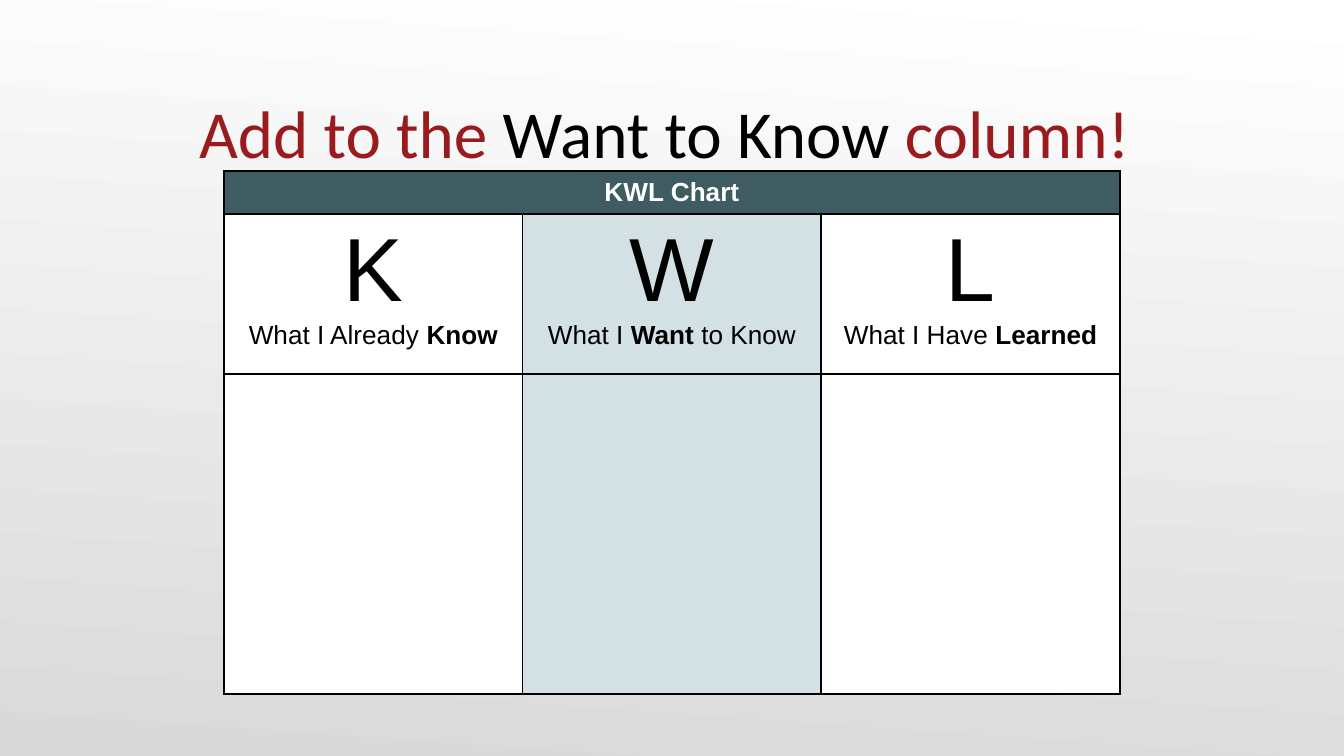
import pptx
import pptx.dml.color
import pptx.enum.text
import pptx.oxml
import pptx.oxml.ns
import pptx.util

EMU_PER_PX = 914400 / 134.4
BLACK = "000000"
WHITE = "FFFFFF"
RED = "991B1E"
TEAL = "3E5C61"
PALE_TEAL = "D4E1E4"


def px(length):
    return pptx.util.Emu(round(length * EMU_PER_PX))


def rgb(value):
    return pptx.dml.color.RGBColor.from_string(value)


def add_text(paragraph, text, font="Arial", size=14, color=BLACK, bold=False):
    paragraph.alignment = pptx.enum.text.PP_ALIGN.CENTER
    run = paragraph.add_run()
    run.text = text
    run.font.name = font
    run.font.size = pptx.util.Pt(size)
    run.font.color.rgb = rgb(color)
    run.font.bold = bold


def paint_background(slide):
    fill = slide.background.fill
    fill.gradient()
    fill.gradient_angle = 266
    for stop, color, position in zip(fill.gradient_stops, (WHITE, "D9D9D9"), (0, 1)):
        stop.color.rgb = rgb(color)
        stop.position = position


def place_heading(slide, left, top, width, height):
    heading = slide.shapes.title
    heading.left, heading.top = px(left), px(top)
    heading.width, heading.height = px(width), px(height)
    frame = heading.text_frame
    frame.auto_size = pptx.enum.text.MSO_AUTO_SIZE.NONE
    frame.word_wrap = True
    frame.vertical_anchor = pptx.enum.text.MSO_ANCHOR.BOTTOM
    frame.margin_left = frame.margin_right = frame.margin_bottom = 0
    frame.margin_top = pptx.util.Inches(0.05)
    for text, color in (("Add to the ", RED), ("Want to Know ", BLACK), ("column! ", RED)):
        add_text(frame.paragraphs[0], text, font="Calibri", size=36, color=color)


def style_cell(cell, color):
    properties = cell._tc.get_or_add_tcPr()
    for side in ("lnL", "lnR", "lnT", "lnB"):
        properties.append(pptx.oxml.parse_xml(
            f'<a:{side} {pptx.oxml.ns.nsdecls("a")} w="12700"><a:solidFill>'
            f'<a:srgbClr val="{BLACK}"/></a:solidFill></a:{side}>'))
    cell.fill.solid()
    cell.fill.fore_color.rgb = rgb(color)


def place_kwl_chart(slide, left, top, width, row_heights):
    columns = (
        ("K", WHITE, (("What I Already ", False), ("Know", True))),
        ("W", PALE_TEAL, (("What I ", False), ("Want", True), (" to Know", False))),
        ("L", WHITE, (("What I Have ", False), ("Learned", True))),
    )
    kwl = slide.shapes.add_table(len(row_heights), len(columns), px(left), px(top),
                                 px(width), px(sum(row_heights))).table
    kwl.first_row = False
    kwl.horz_banding = False
    for row, height in zip(kwl.rows, row_heights):
        row.height = px(height)

    for index, (letter, color, prompt) in enumerate(columns):
        kwl.columns[index].width = px(width / len(columns))
        for row_index, cell_color in enumerate((TEAL, color, color)):
            style_cell(kwl.cell(row_index, index), cell_color)
        frame = kwl.cell(1, index).text_frame
        add_text(frame.paragraphs[0], letter, size=48)
        prompt_line = frame.add_paragraph()
        for text, bold in prompt:
            add_text(prompt_line, text, bold=bold)

    banner = kwl.cell(0, 0)
    banner.merge(kwl.cell(0, len(columns) - 1))
    add_text(banner.text_frame.paragraphs[0], "KWL Chart", color=WHITE, bold=True)


def main():
    presentation = pptx.Presentation()
    presentation.slide_width, presentation.slide_height = px(1344), px(756)
    slide = presentation.slides.add_slide(presentation.slide_layouts[5])
    paint_background(slide)
    place_heading(slide, 67, 46, 1210, 126)
    place_kwl_chart(slide, 224, 171, 896, (43, 160, 320))
    presentation.save("out.pptx")


if __name__ == "__main__":
    main()
